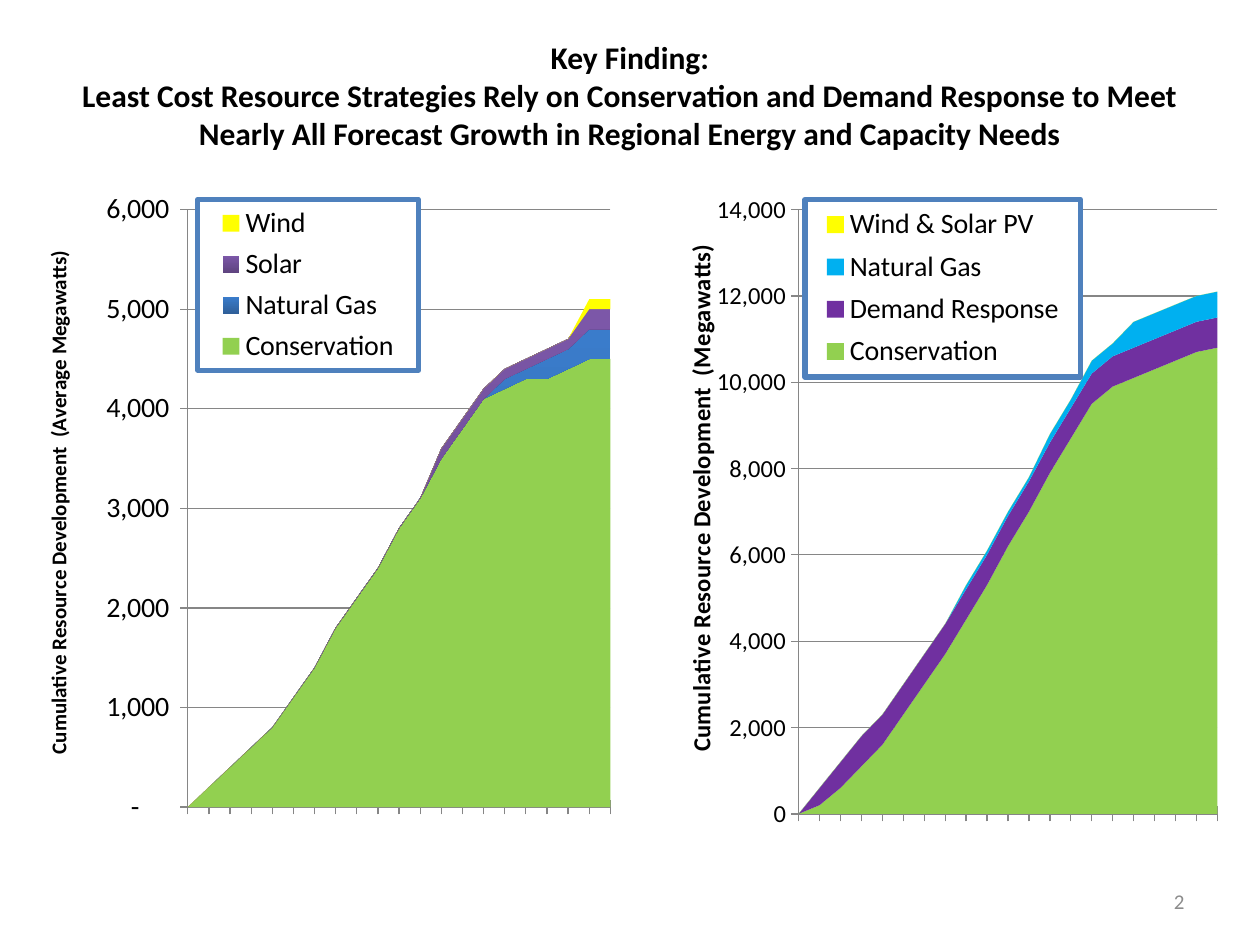
from lxml import etree
from pptx import Presentation
from pptx.chart.data import CategoryChartData
from pptx.dml.color import RGBColor
from pptx.enum.chart import XL_CHART_TYPE, XL_LEGEND_POSITION, XL_TICK_LABEL_POSITION, XL_TICK_MARK
from pptx.enum.text import MSO_ANCHOR, PP_ALIGN
from pptx.oxml import parse_xml
from pptx.oxml.ns import nsdecls, qn
from pptx.util import Inches, Pt

AREA = XL_CHART_TYPE.AREA_STACKED
LEGEND_RIGHT = XL_LEGEND_POSITION.RIGHT
NO_LABELS = XL_TICK_LABEL_POSITION.NONE
CROSS = XL_TICK_MARK.CROSS
MIDDLE = MSO_ANCHOR.MIDDLE
CENTER, RIGHT = PP_ALIGN.CENTER, PP_ALIGN.RIGHT

FONT = "Calibri"
COLORS = {
    "text": "000000", "number": "8C8C8C", "grid": "868686", "white": "FFFFFF", "frame": "4F81BD",
    "green": "92D050", "violet": "7030A0", "sky": "00B0F0", "yellow": "FFFF00",
    "blue_dark": "2F5F99", "blue": "3A7CCB", "purple_dark": "5F4480", "purple": "7C57A8",
}
YEARS = [str(year) for year in range(2015, 2036)]

ENERGY = {
    "box": (0.17, 1.42, 5, 5.42),
    "plot": (0.264, 0.045, 0.671, 0.875),
    "legend": (0.28, 0.03, 0.35, 0.25),
    "title": "Cumulative Resource Development  (Average Megawatts)",
    "title_at": (0.03, 0.1), "title_size": 12, "axis_size": 16,
    "maximum": 6000, "step": 1000,
    "format": '_(* #,##0_);_(* \\(#,##0\\);_(* "-"??_);_(',
    "series": [
        ("Conservation", ["green"], [0, 200, 400, 600, 800, 1100, 1400, 1800, 2100, 2400, 2800,
                                     3100, 3500, 3800, 4100, 4200, 4300, 4300, 4400, 4500, 4500]),
        ("Natural Gas", ["blue_dark", "blue"], [0] * 15 + [100, 100, 200, 200, 300, 300]),
        ("Solar", ["purple_dark", "purple"], [0] * 12 + [100] * 7 + [200] * 2),
        ("Wind", ["yellow"], [0] * 19 + [100] * 2),
    ],
}
CAPACITY = {
    "box": (5.25, 1.42, 4.75, 5.42),
    "plot": (0.229, 0.045, 0.7, 0.885),
    "legend": (0.24, 0.03, 0.46, 0.26),
    "title": "Cumulative Resource Development  (Megawatts)",
    "title_at": (0.03, 0.09), "title_size": 14, "axis_size": 14,
    "maximum": 14000, "step": 2000,
    "format": "#,##0",
    "series": [
        ("Conservation", ["green"], [None, 200, 600, 1100, 1600, 2300, 3000, 3700, 4500, 5300, 6200,
                                     7000, 7900, 8700, 9500, 9900, 10100, 10300, 10500, 10700, 10800]),
        ("Demand Response", ["violet"], [None, 400, 600] + [700] * 18),
        ("Natural Gas", ["sky"], [None] + [0] * 7 + [100] * 4 + [200] * 2 + [300] * 2 + [600] * 5),
        ("Wind & Solar PV", ["yellow"], [None] + [0] * 20),
    ],
}


def rgb(name):
    return RGBColor.from_string(COLORS[name])


def style_font(font, size, color="text", bold=False):
    font.name, font.size, font.bold = FONT, Pt(size), bold
    font.color.rgb = rgb(color)


def set_layout(element, index, place, inner=False):
    """Fix a chart part at fractions of the chart: x, y and optionally w, h."""
    for old in element.findall(qn("c:layout")):
        element.remove(old)
    layout = parse_xml(f"<c:layout {nsdecls('c')}><c:manualLayout/></c:layout>")
    settings = [("layoutTarget", "inner")] if inner else []
    settings += [("xMode", "edge"), ("yMode", "edge")]
    settings += zip("xywh", place)
    for tag, value in settings:
        etree.SubElement(layout[0], qn(f"c:{tag}")).set("val", str(value))
    element.insert(index, layout)


def fill_series(series, colors):
    fill = series.format.fill
    if len(colors) == 1:
        fill.solid()
        fill.fore_color.rgb = rgb(colors[0])
    else:
        fill.gradient()
        fill.gradient_angle = 90
        for stop, color, position in zip(fill.gradient_stops, colors, (0, 1)):
            stop.color.rgb = rgb(color)
            stop.position = position
    series.format.line.fill.background()


def add_legend(chart, place):
    chart.has_legend = True
    legend = chart.legend
    legend.position = LEGEND_RIGHT
    legend.include_in_layout = False
    style_font(legend.font, 16)
    element = legend._element
    set_layout(element, 1, place)
    frame = parse_xml(
        f"<c:spPr {nsdecls('c', 'a')}>"
        f'<a:solidFill><a:srgbClr val="{COLORS["white"]}"/></a:solidFill>'
        f'<a:ln w="{Pt(3)}"><a:solidFill><a:srgbClr val="{COLORS["frame"]}"/></a:solidFill></a:ln>'
        "</c:spPr>")
    element.find(qn("c:txPr")).addprevious(frame)


def format_axes(chart, content):
    years, values = chart.category_axis, chart.value_axis
    for axis in (years, values):
        axis.major_tick_mark = CROSS
        axis.format.line.color.rgb = rgb("grid")
        style_font(axis.tick_labels.font, content["axis_size"])
    years.tick_label_position = NO_LABELS
    years.has_major_gridlines = False

    values.minimum_scale, values.maximum_scale = 0, content["maximum"]
    values.major_unit = content["step"]
    values.has_major_gridlines = True
    values.major_gridlines.format.line.color.rgb = rgb("grid")
    values.tick_labels.number_format = content["format"]
    values.tick_labels.number_format_is_linked = False
    values._element.find(qn("c:crossBetween")).set("val", "midCat")

    frame = values.axis_title.text_frame
    span = frame.paragraphs[0].add_run()
    span.text = content["title"]
    style_font(span.font, content["title_size"], bold=True)
    title = values.axis_title._element
    body = title.find(".//" + qn("a:bodyPr"))
    body.set("rot", "-5400000")
    body.set("vert", "horz")
    set_layout(title, 1, content["title_at"])


def add_area_chart(page, content):
    data = CategoryChartData()
    data.categories = YEARS
    for name, _, values in content["series"]:
        data.add_series(name, values)
    box = [Inches(length) for length in content["box"]]
    chart = page.shapes.add_chart(AREA, *box, data).chart
    chart.has_title = False
    style_font(chart.font, content["axis_size"])
    for series, (_, colors, _) in zip(chart.plots[0].series, content["series"]):
        fill_series(series, colors)
    format_axes(chart, content)
    add_legend(chart, content["legend"])
    set_layout(chart._chartSpace.chart.plotArea, 0, content["plot"], inner=True)


def add_title(page, left, top, width, height):
    box = page.shapes.title
    box.left, box.top, box.width, box.height = map(Inches, (left, top, width, height))
    box.text_frame.vertical_anchor = MIDDLE
    para = box.text_frame.paragraphs[0]
    para.alignment = CENTER
    lines = ("Key Finding:",
             "Least Cost Resource Strategies Rely on Conservation and Demand Response to Meet "
             "Nearly All Forecast Growth in Regional Energy and Capacity Needs")
    for number, line in enumerate(lines):
        if number:
            para.add_line_break()
        span = para.add_run()
        span.text = line
        style_font(span.font, 18, bold=True)


def add_page_number(page, left, top, width, height):
    box = page.shapes.add_textbox(*map(Inches, (left, top, width, height)))
    box.text_frame.word_wrap = True
    box.text_frame.vertical_anchor = MIDDLE
    para = box.text_frame.paragraphs[0]
    para.alignment = RIGHT
    span = para.add_run()
    span.text = "2"
    style_font(span.font, 12, "number")


def main():
    deck = Presentation()
    deck.slide_width, deck.slide_height = Inches(10), Inches(7.5)
    page = deck.slides.add_slide(deck.slide_layouts[5])
    add_title(page, 0.5, 0.17, 9, 1.17)
    for content in (ENERGY, CAPACITY):
        add_area_chart(page, content)
    add_page_number(page, 7.17, 6.95, 2.33, 0.4)
    deck.save("out.pptx")


if __name__ == "__main__":
    main()
